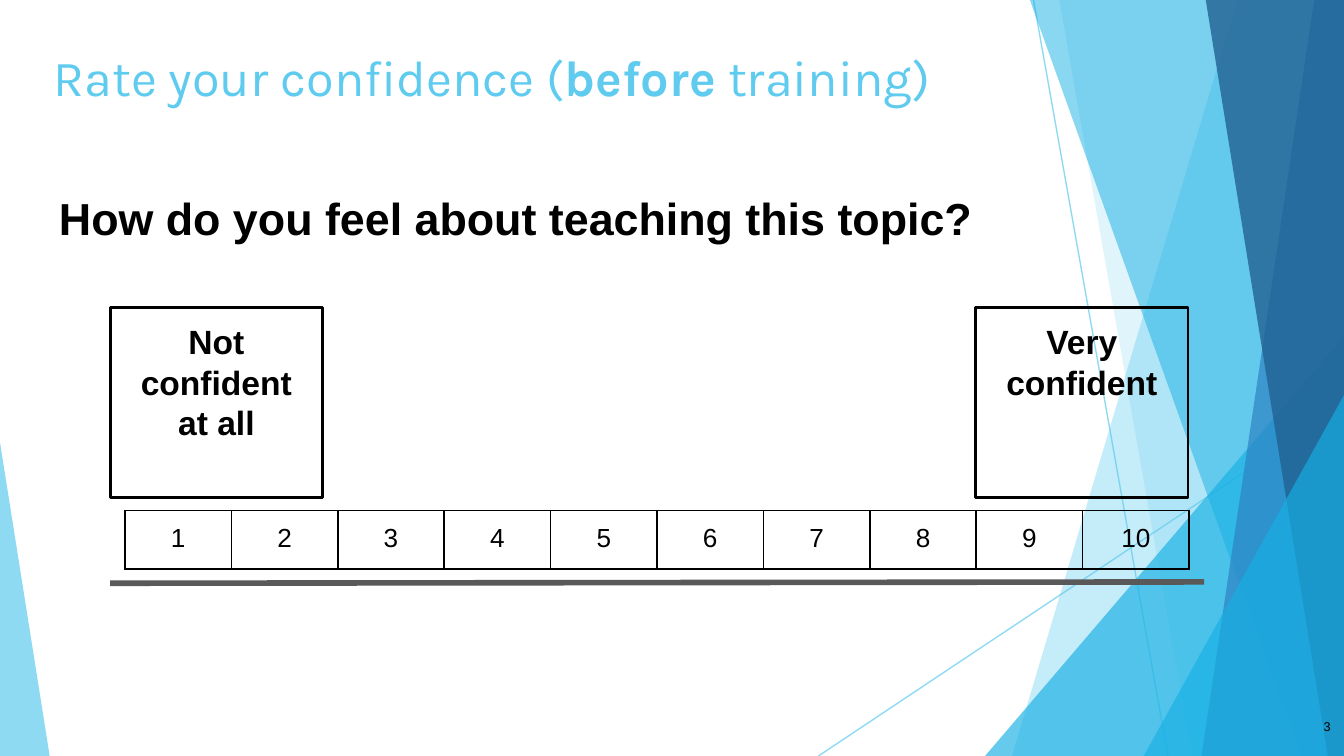
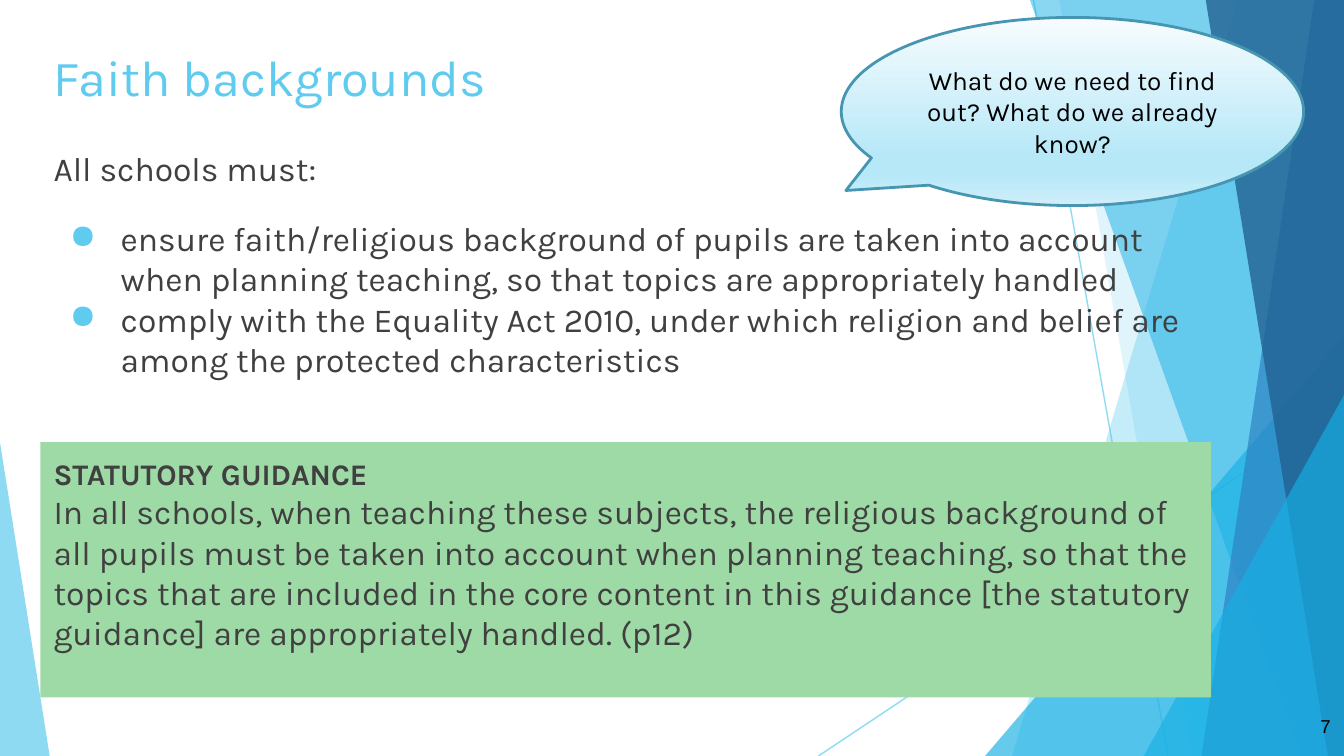
from lxml.etree import SubElement
from pptx import Presentation
from pptx.dml.color import RGBColor
from pptx.enum.shapes import MSO_CONNECTOR, MSO_SHAPE
from pptx.enum.text import MSO_ANCHOR, PP_ALIGN
from pptx.oxml.ns import qn
from pptx.util import Emu, Inches, Pt

# Grid: 100 columns by 56.25 rows, square units of a tenth of an inch
COLS, ROWS = 100, 56.25
UNIT = Inches(0.1)
TOP = -0.1  # the bands start just above the slide
MARGIN = 3
BODY_W = 87.1

COLORS = {
    "sky": "5FCBEF", "cyan": "17B0E4", "blue": "2E83C3", "navy": "226292",
    "ink": "000000", "text": "404040", "axis": "595959", "green": "9EDAA6",
    "bubble_edge": "4696B1", "bubble_top": "F7FCFE",
    "bubble_mid": "B7E8F8", "bubble_end": "CFEFFA",
}
ALIGN = {"l": PP_ALIGN.LEFT, "c": PP_ALIGN.CENTER, "r": PP_ALIGN.RIGHT}


def g(n):
    return Emu(round(n * UNIT))


def rgb(name):
    return RGBColor.from_string(COLORS[name])


def set_alpha(parent, percent):
    clr = next(parent.iter(qn("a:srgbClr")))
    SubElement(clr, qn("a:alpha")).set("val", str(percent * 1000))


# Text
def add_bullet(p, char, color):
    pPr = p._p.get_or_add_pPr()
    pPr.set("marL", str(Inches(0.5)))
    pPr.set("indent", str(-Inches(0.38)))
    clr = SubElement(pPr, qn("a:buClr"))
    SubElement(clr, qn("a:srgbClr")).set("val", COLORS[color])
    SubElement(pPr, qn("a:buChar")).set("char", char)


def write(p, text, size=18, font="Karla", color="text", bold=False, align="l",
          before=0, after=0, spacing=None, bullet=None):
    """Fill a paragraph; text is a string or a list of (string, format) runs."""
    p.alignment = ALIGN[align]
    p.space_before, p.space_after = Pt(before), Pt(after)
    if spacing:
        p.line_spacing = spacing
    if bullet:
        add_bullet(p, bullet, "sky")
    for part, fmt in [(text, {})] if isinstance(text, str) else text:
        if part == "\n":
            p.add_line_break()
            continue
        r = p.add_run()
        r.text = part
        r.font.name = font
        r.font.size = Pt(fmt.get("size", size))
        r.font.bold = fmt.get("bold", bold)
        r.font.color.rgb = rgb(color)


def frame(sp, anchor=MSO_ANCHOR.TOP, inset_y=1):
    tf = sp.text_frame
    tf.word_wrap = True
    tf.vertical_anchor = anchor
    tf.margin_left = tf.margin_right = g(1)
    tf.margin_top = tf.margin_bottom = g(inset_y)
    return tf


def text_box(s, x, y, w, h, text, anchor=MSO_ANCHOR.TOP, **fmt):
    tf = frame(s.shapes.add_textbox(g(x), g(y), g(w), g(h)), anchor)
    write(tf.paragraphs[0], text, **fmt)
    return tf


# Shapes and lines
def paint(sp, fill=None, alpha=None, line=None, width=1.5):
    sp.shadow.inherit = False
    if fill:
        sp.fill.solid()
        sp.fill.fore_color.rgb = rgb(fill)
        if alpha:
            set_alpha(sp._element.spPr.find(qn("a:solidFill")), alpha)
    else:
        sp.fill.background()
    if line:
        sp.line.color.rgb = rgb(line)
        sp.line.width = Pt(width)
    else:
        sp.line.fill.background()


def shape(s, kind, x, y, w, h, adj=(), **look):
    sp = s.shapes.add_shape(kind, g(x), g(y), g(w), g(h))
    for i, value in enumerate(adj):
        sp.adjustments[i] = value
    paint(sp, **look)
    return sp


def line(s, x1, y1, x2, y2, color, width, alpha=None):
    c = s.shapes.add_connector(MSO_CONNECTOR.STRAIGHT, g(x1), g(y1), g(x2), g(y2))
    c.line.color.rgb = rgb(color)
    c.line.width = Pt(width)
    if alpha:
        set_alpha(c.line._ln, alpha)
    SubElement(c._element.spPr, qn("a:effectLst"))


def band(s, top_x, bottom_x, color, alpha):
    """A slanted band that reaches the right edge of the slide."""
    fb = s.shapes.build_freeform(g(top_x), g(TOP))
    fb.add_line_segments([(g(COLS), g(TOP)), (g(COLS), g(ROWS)),
                          (g(bottom_x), g(ROWS))], close=True)
    paint(fb.convert_to_shape(), color, alpha)


def corner(s, x, y, w, side, color, alpha):
    """A triangle that stands on the bottom edge; side 0 is left, 1 right."""
    shape(s, MSO_SHAPE.ISOSCELES_TRIANGLE, x, y, w, ROWS - y, [side],
          fill=color, alpha=alpha)


def gradient(sp, stops):
    sp.fill.gradient()
    sp.fill.gradient_angle = 270  # top to bottom
    gs_lst = sp._element.spPr.find(qn("a:gradFill")).find(qn("a:gsLst"))
    for gs in list(gs_lst):
        gs_lst.remove(gs)
    for pos, color in stops:
        gs = SubElement(gs_lst, qn("a:gs"))
        gs.set("pos", str(pos * 1000))
        SubElement(gs, qn("a:srgbClr")).set("val", COLORS[color])


# Shared by both slides
def backdrop(s):
    line(s, 76.9, 0, 86.9, ROWS, "sky", 0.75, 70)
    line(s, COLS, 30.2, 60.9, ROWS, "sky", 0.75, 70)
    band(s, 92.1, 75.3, "sky", 36)
    band(s, 78.8, 88.7, "sky", 20)
    corner(s, 73.3, 25, 26.7, 1, "cyan", 66)
    band(s, 76.6, 96.8, "cyan", 50)
    band(s, 97.8, 89.4, "blue", 70)
    band(s, 89.7, 98.8, "navy", 80)
    corner(s, 85.1, 29.4, 14.9, 1, "cyan", 66)
    corner(s, 0, 32.9, 3.7, 0, "sky", 70)


def new_slide(prs, title, title_w, number, number_size):
    s = prs.slides.add_slide(prs.slide_layouts[6])
    backdrop(s)
    text_box(s, MARGIN, 2.4, title_w, 6.3, title, size=27, color="sky")
    text_box(s, 94, 51.9, 6, 4.3, number, MSO_ANCHOR.MIDDLE,
             size=number_size, font="Arial", color="ink", align="r")
    return s


# Confidence scale
def scale_label(s, x, text):
    sp = shape(s, MSO_SHAPE.RECTANGLE, x, 22.9, 15.8, 14.1, line="ink")
    write(frame(sp).paragraphs[0], text, font="Arial", color="ink", bold=True,
          align="c")


def cell_borders(cell):
    tcPr = cell._tc.get_or_add_tcPr()
    for i, tag in enumerate(("a:lnL", "a:lnR", "a:lnT", "a:lnB")):
        ln = tcPr.makeelement(qn(tag), {"w": str(Pt(1))})
        fill = SubElement(ln, qn("a:solidFill"))
        SubElement(fill, qn("a:srgbClr")).set("val", COLORS["ink"])
        tcPr.insert(i, ln)


def scale_table(s, x, y, w, h, steps):
    t = s.shapes.add_table(1, steps, g(x), g(y), g(w), g(h)).table
    t.first_row = t.horz_banding = False
    for i, col in enumerate(t.columns):
        col.width = g(w / steps)
        cell = t.cell(0, i)
        cell.fill.background()
        cell.margin_left = cell.margin_right = g(1)
        cell.margin_top = cell.margin_bottom = g(1)
        write(cell.text_frame.paragraphs[0], str(i + 1), size=14, font="Arial",
              color="ink", align="c")
        cell_borders(cell)


def confidence_slide(prs):
    title = [("Rate your confidence (", {}), ("before", {"bold": True}),
             (" training)", {})]
    s = new_slide(prs, title, 93.6, "3", 6.8)
    text_box(s, 3.4, 12.6, 93.2, 37.4, "How do you feel about teaching this topic?",
             size=24, font="Arial", color="ink", bold=True, spacing=1.15, after=16)
    scale_label(s, 8.2, "Not confident at all")
    scale_label(s, 72.6, "Very confident")
    scale_table(s, 9.3, 38, 79.2, 4.2, 10)
    line(s, 8.2, 43.4, 89.6, 43.3, "axis", 3)


# Faith backgrounds
def faith_slide(prs):
    s = new_slide(prs, "Faith backgrounds", 64.1, "7", 10)
    tf = text_box(s, MARGIN, 10, BODY_W, 44.1, "All schools must:")
    duties = [
        "ensure faith/religious background of pupils are taken into account "
        "when planning teaching, so that topics are appropriately handled",
        "comply with the Equality Act 2010, under which religion and belief are "
        "among the protected characteristics",
    ]
    for i, duty in enumerate(duties):
        write(tf.add_paragraph(), duty, bullet="●", before=0 if i else 16)

    # Guidance panel
    panel = shape(s, MSO_SHAPE.RECTANGLE, MARGIN, 32.9, BODY_W, 19, fill="green")
    write(frame(panel).paragraphs[0], [
        ("STATUTORY GUIDANCE", {"size": 16, "bold": True}),
        ("\n", {}),
        ("In all schools, when teaching these subjects, the religious background "
         "of all pupils must be taken into account when planning teaching, so that "
         "the topics that are included in the core content in this guidance [the "
         "statutory guidance] are appropriately handled. (p12)", {}),
    ])

    # Question bubble
    bubble = shape(s, MSO_SHAPE.OVAL_CALLOUT, 62.6, 1.3, 34.4, 14,
                   [-0.49, 0.42], line="bubble_edge")
    gradient(bubble, [(0, "bubble_top"), (74, "bubble_mid"),
                      (83, "bubble_mid"), (100, "bubble_end")])
    write(frame(bubble, MSO_ANCHOR.MIDDLE, 0.5).paragraphs[0],
          "What do we need to find out? What do we already know?",
          size=14, color="ink", align="c")


def main():
    prs = Presentation()
    prs.slide_width, prs.slide_height = g(COLS), g(ROWS)
    confidence_slide(prs)
    faith_slide(prs)
    prs.save("out.pptx")


if __name__ == "__main__":
    main()
